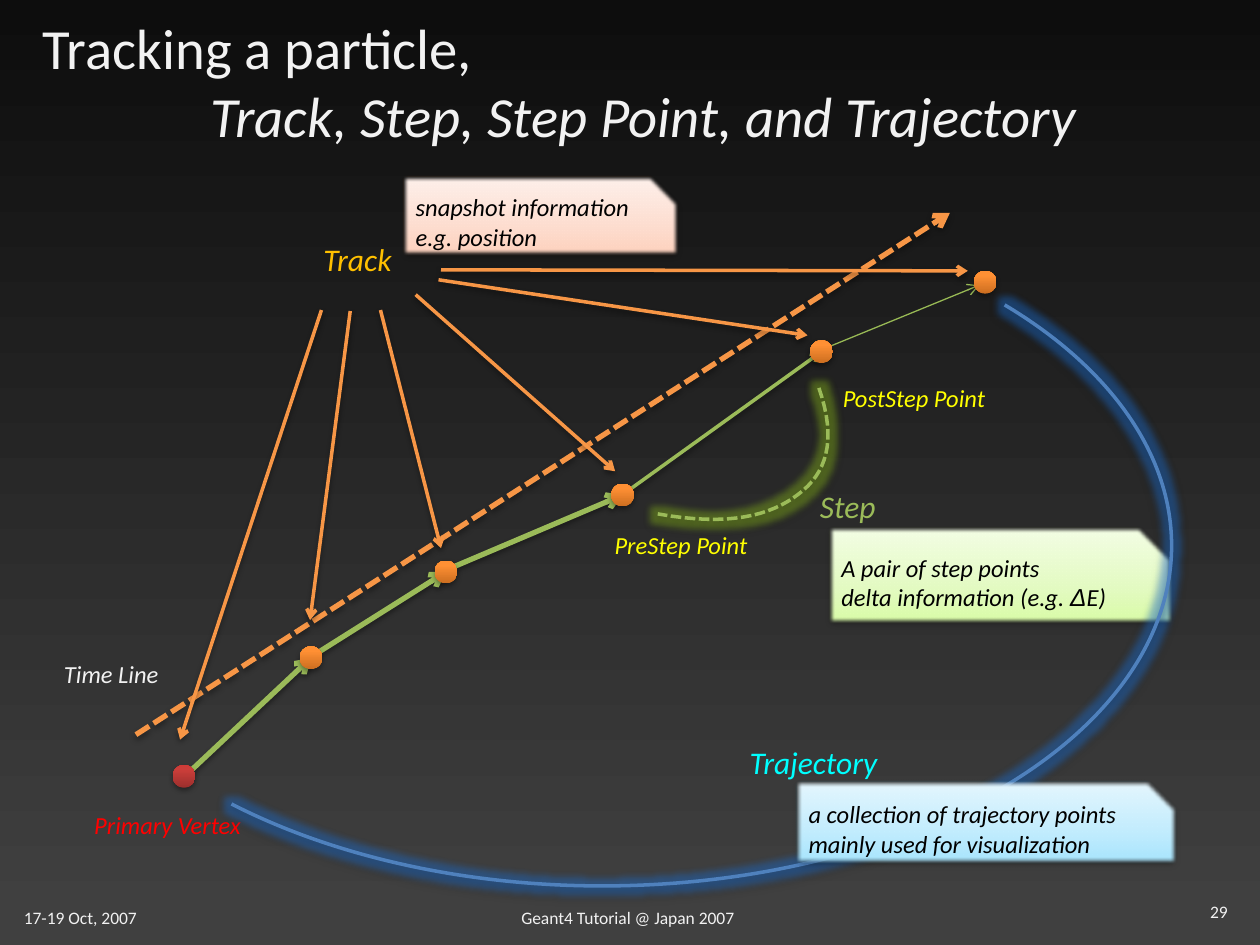
from dataclasses import dataclass
from itertools import pairwise

from lxml import etree
from pptx import Presentation
from pptx.dml.color import RGBColor
from pptx.enum.dml import MSO_LINE
from pptx.enum.shapes import MSO_CONNECTOR, MSO_SHAPE
from pptx.enum.text import MSO_ANCHOR, PP_ALIGN
from pptx.oxml.ns import qn
from pptx.util import Cm, Pt

ARC, ELLIPSE, SNIPPED = MSO_SHAPE.ARC, MSO_SHAPE.OVAL, MSO_SHAPE.SNIP_1_RECTANGLE
STRAIGHT, DASHED = MSO_CONNECTOR.STRAIGHT, MSO_LINE.SQUARE_DOT
LEFT, RIGHT = PP_ALIGN.LEFT, PP_ALIGN.RIGHT
TOP, MIDDLE = MSO_ANCHOR.TOP, MSO_ANCHOR.MIDDLE
TITLE_ONLY = 5


@dataclass(frozen=True)
class Theme:
    font: str = "Calibri"
    symbol_font: str = "Arial"
    title_size: float = 32.4
    heading_size: float = 18
    label_size: float = 14
    footer_size: float = 10
    light: str = "F2F2F2"
    dark: str = "000000"
    red: str = "FF0000"
    yellow: str = "FFFF00"
    gold: str = "FFC000"
    cyan: str = "00FFFF"
    orange: str = "F79646"
    green: str = "9BBB59"
    thin_green: str = "98B955"
    blue: str = "4F81BD"
    green_glow: str = "94C61F"
    blue_glow: str = "1F7AE8"
    background: tuple = ((3, "404040"), (100, "0D0D0D"))
    red_dot: tuple = ((0, "9C2F2D"), (80, "CB3E3A"), (100, "CE3B37"))
    orange_dot: tuple = ((0, "CC6E20"), (80, "FF9034"), (100, "FF9136"))
    # Note styles: gradient stops and outline
    green_note: tuple = (((0, "DAFDA7"), (35, "E4FCC2"), (100, "F5FFE7")), "98B955")
    orange_note: tuple = (((0, "FFD2BD"), (35, "FFDED0"), (100, "FFF2ED")), "F69240")
    blue_note: tuple = (((0, "A7E6FF"), (35, "C1EDFF"), (100, "E7F8FF")), "46AAC5")


THEME = Theme()


@dataclass(frozen=True)
class Box:
    """A region in centimetres; its parts are placed from its corner."""
    left: float
    top: float
    width: float
    height: float

    def inner(self, left, top, width, height):
        return Box(self.left + left, self.top + top, width, height)

    def point(self, x, y):
        return Cm(self.left + x), Cm(self.top + y)

    def frame(self):
        return Cm(self.left), Cm(self.top), Cm(self.width), Cm(self.height)


def add_element(parent, tag, **attributes):
    return etree.SubElement(parent, qn(tag), {key: str(value) for key, value in attributes.items()})


def set_gradient(fill, element, stops):
    """Fill from bottom to top with (percent, colour) stops."""
    fill.gradient()
    fill.gradient_angle = 90
    stop_list = element.find(".//" + qn("a:gsLst"))
    for stop in list(stop_list):
        stop_list.remove(stop)
    for percent, color in stops:
        stop = add_element(stop_list, "a:gs", pos=percent * 1000)
        add_element(stop, "a:srgbClr", val=color)


def set_effects(shape, glow=None, soft_edge=0, shadow=True):
    properties = shape.element.spPr
    effects = properties.find(qn("a:effectLst"))
    if effects is None:
        effects = add_element(properties, "a:effectLst")
    if glow:
        color = add_element(add_element(effects, "a:glow", rad=Pt(8)), "a:srgbClr", val=glow)
        add_element(color, "a:alpha", val=40000)
    if shadow:
        outer = add_element(effects, "a:outerShdw", blurRad=Pt(3.1), dist=Pt(1.6),
                            dir=5400000, rotWithShape=0)
        add_element(add_element(outer, "a:srgbClr", val=THEME.dark), "a:alpha", val=38000)
    if soft_edge:
        add_element(effects, "a:softEdge", rad=Pt(soft_edge))


def set_line(shape, color, width, dash=None):
    shape.line.color.rgb = RGBColor.from_string(color)
    shape.line.width = Pt(width)
    if dash:
        shape.line.dash_style = dash


def add_run(paragraph, text, size, color, italic=False, font=THEME.font):
    run = paragraph.add_run()
    run.text = text
    run.font.name, run.font.size, run.font.italic = font, Pt(size), italic
    run.font.color.rgb = RGBColor.from_string(color)


def write_text(frame, paragraphs, size=THEME.label_size, color=THEME.light, italic=True,
               align=LEFT, anchor=TOP, wrap=False):
    """Write paragraphs; each is a string or a list of (text, font) runs."""
    frame.word_wrap, frame.vertical_anchor = wrap, anchor
    for index, content in enumerate(paragraphs):
        paragraph = frame.add_paragraph() if index else frame.paragraphs[0]
        paragraph.alignment = align
        runs = [(content, THEME.font)] if isinstance(content, str) else content
        for text, font in runs:
            add_run(paragraph, text, size, color, italic, font)


def add_label(slide, box, text, **text_format):
    write_text(slide.shapes.add_textbox(*box.frame()).text_frame, [text], **text_format)


def add_arrow(slide, start, end, color, width, dash=None, shadow=True):
    arrow = slide.shapes.add_connector(STRAIGHT, *start, *end)
    set_line(arrow, color, width, dash)
    add_element(arrow.line._get_or_add_ln(), "a:tailEnd", type="arrow")
    set_effects(arrow, shadow=shadow)


def add_note(slide, box, paragraphs, style):
    stops, outline = style
    note = slide.shapes.add_shape(SNIPPED, *box.frame())
    note.adjustments[0] = 0.32
    note.shadow.inherit = False
    set_gradient(note.fill, note.element.spPr, stops)
    set_line(note, outline, 0.75)
    set_effects(note, soft_edge=2)
    write_text(note.text_frame, paragraphs, color=THEME.dark, anchor=MIDDLE, wrap=True)


def add_dot(slide, box, x, y, stops, diameter=0.46):
    corner = box.inner(x - diameter / 2, y - diameter / 2, diameter, diameter)
    dot = slide.shapes.add_shape(ELLIPSE, *corner.frame())
    dot.shadow.inherit = False
    set_gradient(dot.fill, dot.element.spPr, stops)
    dot.line.fill.background()
    set_effects(dot)


def bezier(points, steps=16):
    """Points along a cubic curve, without its first point."""
    for step in range(1, steps + 1):
        t = step / steps
        weights = ((1 - t) ** 3, 3 * t * (1 - t) ** 2, 3 * t * t * (1 - t), t ** 3)
        yield tuple(sum(w * p[axis] for w, p in zip(weights, points)) for axis in (0, 1))


def draw_title(slide, box):
    title = slide.shapes.title
    title.left, title.top, title.width, title.height = box.frame()
    write_text(title.text_frame, ["Tracking a particle,"], size=THEME.title_size, italic=False,
               anchor=MIDDLE, wrap=True)
    paragraph = title.text_frame.paragraphs[0]
    # A hanging indent sets the second line in
    properties = paragraph._p.get_or_add_pPr()
    properties.set("marL", str(Cm(3.38)))
    properties.set("indent", str(-Cm(3.38)))
    paragraph.add_line_break()
    add_run(paragraph, "Track, Step, Step Point, and Trajectory", THEME.title_size, THEME.light, True)


def draw_time_line(slide, box):
    add_arrow(slide, box.point(1.74, 10.81), box.point(18.15, 0.29), THEME.orange, 3, DASHED)
    add_label(slide, box.inner(0.04, 9.16, 2.44, 0.86), "Time Line")


def draw_steps(slide, box):
    # Note and dashed curve for one step
    delta = [("delta information (e.g. ", THEME.font), ("Δ", THEME.symbol_font), ("E)", THEME.font)]
    add_note(slide, box.inner(15.21, 5.62, 6.91, 1.93), ["A pair of step points", delta], THEME.green_note)
    knots = [(15.01, 2.82), (15.39, 3.92), (15.14, 4.55), (14.6, 4.96),
             (14.04, 5.39), (13.21, 5.62), (11.76, 5.36)]
    builder = slide.shapes.build_freeform(*box.point(*knots[0]))
    curve = [point for first in (0, 3) for point in bezier(knots[first:first + 4])]
    builder.add_line_segments([box.point(*point) for point in curve], close=False)
    step_curve = builder.convert_to_shape()
    step_curve.shadow.inherit = False
    step_curve.fill.background()
    set_line(step_curve, THEME.green, 2, DASHED)
    set_effects(step_curve, glow=THEME.green_glow)

    # Steps, then the step points over them
    centers = [(2.21, 10.65), (4.77, 8.26), (7.49, 6.53), (11.05, 4.98), (15.06, 2.09), (18.36, 0.69)]
    for (start, end), width in zip(pairwise(centers), (3, 3, 3, 2, 0.75)):
        thin = width < 1
        gap = 0.12 if thin else 0
        add_arrow(slide, box.point(start[0] + 0.1, start[1] - 0.08),
                  box.point(end[0] - gap, end[1] + gap / 2),
                  THEME.thin_green if thin else THEME.green, width, shadow=not thin)
    for index, center in enumerate(centers):
        add_dot(slide, box, *center, THEME.orange_dot if index else THEME.red_dot)

    add_label(slide, box.inner(0.15, 11.21, 3.53, 0.86), "Primary Vertex", color=THEME.red)
    add_label(slide, box.inner(14.78, 4.7, 1.65, 1.02), "Step", size=THEME.heading_size, color=THEME.green)
    add_label(slide, box.inner(10.64, 5.57, 3.23, 0.86), "PreStep Point", color=THEME.yellow)
    add_label(slide, box.inner(15.24, 2.59, 3.4, 0.86), "PostStep Point", color=THEME.yellow)


def draw_track(slide, box):
    add_label(slide, box.inner(2.77, 1.22, 2.26, 1.02), "Track", size=THEME.heading_size,
              color=THEME.gold, wrap=True)
    # One arrow to each step point
    for x1, y1, x2, y2 in ((2.98, 2.75, 0.13, 11.41), (3.56, 2.77, 2.75, 9), (4.17, 2.75, 5.39, 7.55),
                           (4.88, 2.44, 8.9, 6), (5.34, 2.14, 12.78, 3.26), (5.39, 1.94, 16.01, 1.96)):
        add_arrow(slide, box.point(x1, y1), box.point(x2, y2), THEME.orange, 2)
    add_note(slide, box.inner(4.63, 0.06, 5.54, 1.57), ["snapshot information", "e.g. position"],
             THEME.orange_note)


def draw_trajectory(slide, box):
    arc = slide.shapes.add_shape(ARC, *box.frame())
    arc.adjustments[0], arc.adjustments[1] = 197.47, 87.07
    arc.shadow.inherit = False
    arc.fill.background()
    set_line(arc, THEME.blue, 2)
    set_effects(arc, glow=THEME.blue_glow)
    add_label(slide, box.inner(14.2, 10.72, 3.1, 1.02), "Trajectory", size=THEME.heading_size, color=THEME.cyan)
    add_note(slide, box.inner(15.39, 11.61, 7.65, 1.65),
             ["a collection of trajectory points", "mainly used for visualization"], THEME.blue_note)


def draw_footer(slide, box):
    small = {"size": THEME.footer_size, "italic": False}
    add_label(slide, box.inner(0.23, 0.16, 2.84, 0.69), "17-19 Oct, 2007", **small)
    add_label(slide, box.inner(10.26, 0.16, 4.9, 0.69), "Geant4 Tutorial @ Japan 2007", **small)
    add_label(slide, box.inner(19.08, 0.03, 5.92, 1.02), "29", align=RIGHT, wrap=True, **small)


def main():
    presentation = Presentation()
    presentation.slide_width, presentation.slide_height = Cm(25.4), Cm(19.05)
    slide = presentation.slides.add_slide(presentation.slide_layouts[TITLE_ONLY])
    set_gradient(slide.background.fill, slide.element, THEME.background)
    draw_title(slide, Box(0.61, 0.25, 22.86, 2.77))
    draw_time_line(slide, Box(1, 4, 18.5, 11))
    draw_steps(slide, Box(1.5, 5, 22.5, 12.5))
    draw_track(slide, Box(3.5, 3.5, 16.5, 11.5))
    draw_trajectory(slide, Box(0.66, 4.14, 22.96, 13.72))
    draw_footer(slide, Box(0, 18, 25.4, 1.05))
    presentation.save("out.pptx")


if __name__ == "__main__":
    main()
